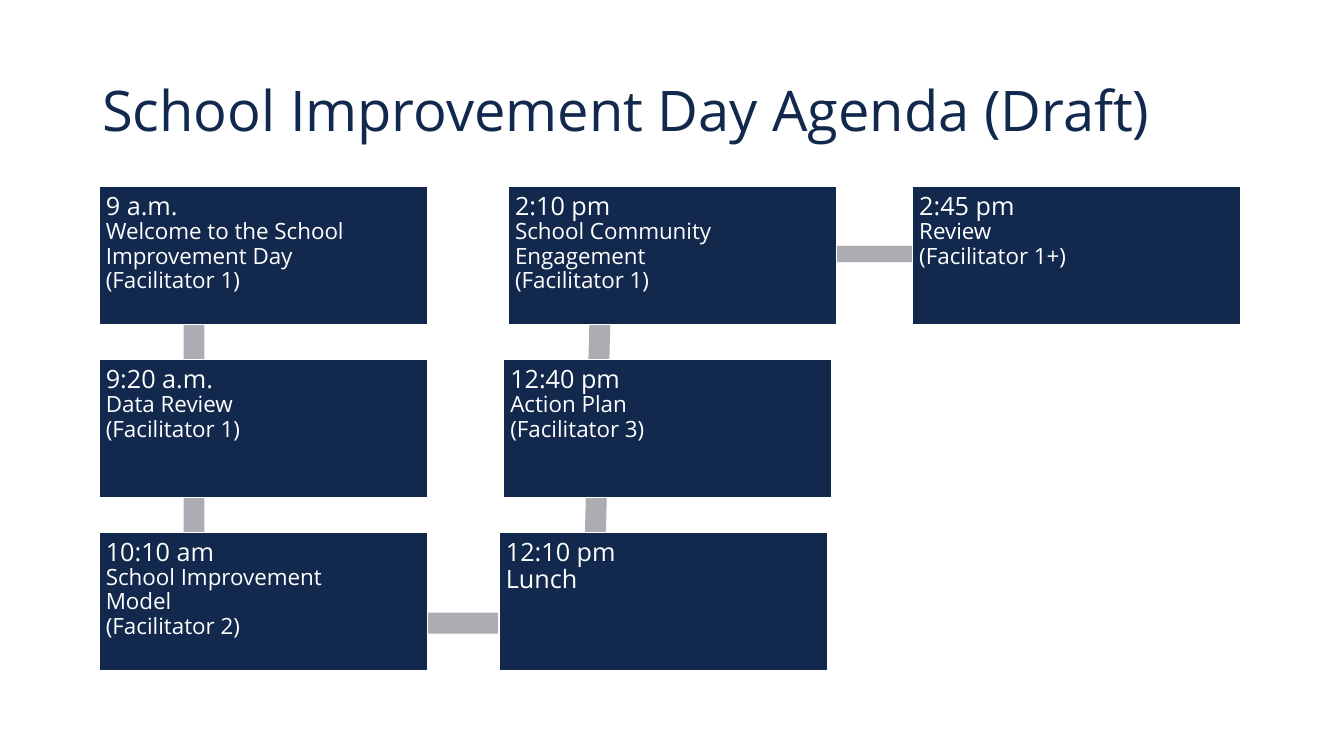
from pptx import Presentation
from pptx.dml.color import RGBColor
from pptx.enum.shapes import MSO_SHAPE
from pptx.enum.text import MSO_ANCHOR, PP_ALIGN
from pptx.util import Pt

RECTANGLE = MSO_SHAPE.RECTANGLE
TOP, MIDDLE = MSO_ANCHOR.TOP, MSO_ANCHOR.MIDDLE
LEFT = PP_ALIGN.LEFT
FONT = "Open Sans"
NAVY, GRAY, WHITE = "12284C", "ABADB2", "FFFFFF"

CARD_WIDTH, CARD_HEIGHT = 234.8, 98.6
FIRST_ROW, ROW_STEP = 133.2, 123.5
CARD_INSET = 5

# left, row, time, activity lines, activity size
SESSIONS = [
    (70.6, 0, "9 a.m.", ["Welcome to the School Improvement Day", "(Facilitator 1)"], 16),
    (70.6, 1, "9:20 a.m.", ["Data Review", "(Facilitator 1)"], 16),
    (70.6, 2, "10:10 am", ["School Improvement", "Model", "(Facilitator 2)"], 16),
    (356.4, 2, "12:10 pm", ["Lunch"], 18),
    (359.5, 1, "12:40 pm", ["Action Plan", "(Facilitator 3)"], 16),
    (362.9, 0, "2:10 pm", ["School Community Engagement", "(Facilitator 1)"], 16),
    (651.6, 0, "2:45 pm", ["Review", "(Facilitator 1+)"], 16),
]

# left, top, length, thickness, rotation
LINKS = [
    (77, 211.7, 123.1, 15, 90),
    (77, 335.5, 123.1, 15, 90),
    (133.2, 437.6, 382.3, 15, 0),
    (365, 335, 122.4, 15, 91.4),
    (367.2, 211.7, 123.1, 15, 91.5),
    (596.2, 175.7, 129.6, 11.5, 0),
]


def color(hex_value):
    """Return the RGB colour for a hex string."""
    return RGBColor.from_string(hex_value)


def write_lines(frame, lines, text_color, anchor):
    """Write (text, size) pairs as left-aligned paragraphs."""
    frame.word_wrap = True
    frame.vertical_anchor = anchor
    frame.text = "\n".join(text for text, _ in lines)
    for paragraph, (_, size) in zip(frame.paragraphs, lines):
        paragraph.alignment = LEFT
        paragraph.line_spacing = 0.9
        for run in paragraph.runs:
            run.font.name = FONT
            run.font.size = Pt(size)
            run.font.color.rgb = color(text_color)


def add_title(slide, text):
    """Add the slide heading."""
    heading = slide.shapes.add_textbox(Pt(66), Pt(28.8), Pt(828), Pt(104.4))
    write_lines(heading.text_frame, [(text, 40)], NAVY, MIDDLE)


def add_block(slide, left, top, width, height, fill):
    """Add a plain filled rectangle without an outline."""
    block = slide.shapes.add_shape(RECTANGLE, Pt(left), Pt(top), Pt(width), Pt(height))
    block.shadow.inherit = False
    block.fill.solid()
    block.fill.fore_color.rgb = color(fill)
    block.line.fill.background()
    return block


def add_link(slide, left, top, length, thickness, rotation):
    """Add a grey bar that leads from one session to the next."""
    link = add_block(slide, left, top, length, thickness, GRAY)
    link.rotation = rotation


def add_session(slide, left, row, time, activity, size):
    """Add a session card with its time and activity."""
    top = FIRST_ROW + row * ROW_STEP
    card = add_block(slide, left, top, CARD_WIDTH, CARD_HEIGHT, NAVY)
    card.line.color.rgb = color(WHITE)
    card.line.width = Pt(1)
    frame = card.text_frame
    frame.margin_left = frame.margin_right = Pt(CARD_INSET)
    frame.margin_top = frame.margin_bottom = Pt(CARD_INSET)
    write_lines(frame, [(time, 18)] + [(line, size) for line in activity], WHITE, TOP)


def main():
    """Build the agenda slide and save it."""
    deck = Presentation()
    deck.slide_width, deck.slide_height = Pt(960), Pt(540)
    slide = deck.slides.add_slide(deck.slide_layouts[6])
    add_title(slide, "School Improvement Day Agenda (Draft)")
    for link in LINKS:
        add_link(slide, *link)
    for session in SESSIONS:
        add_session(slide, *session)
    deck.save("out.pptx")


if __name__ == "__main__":
    main()
